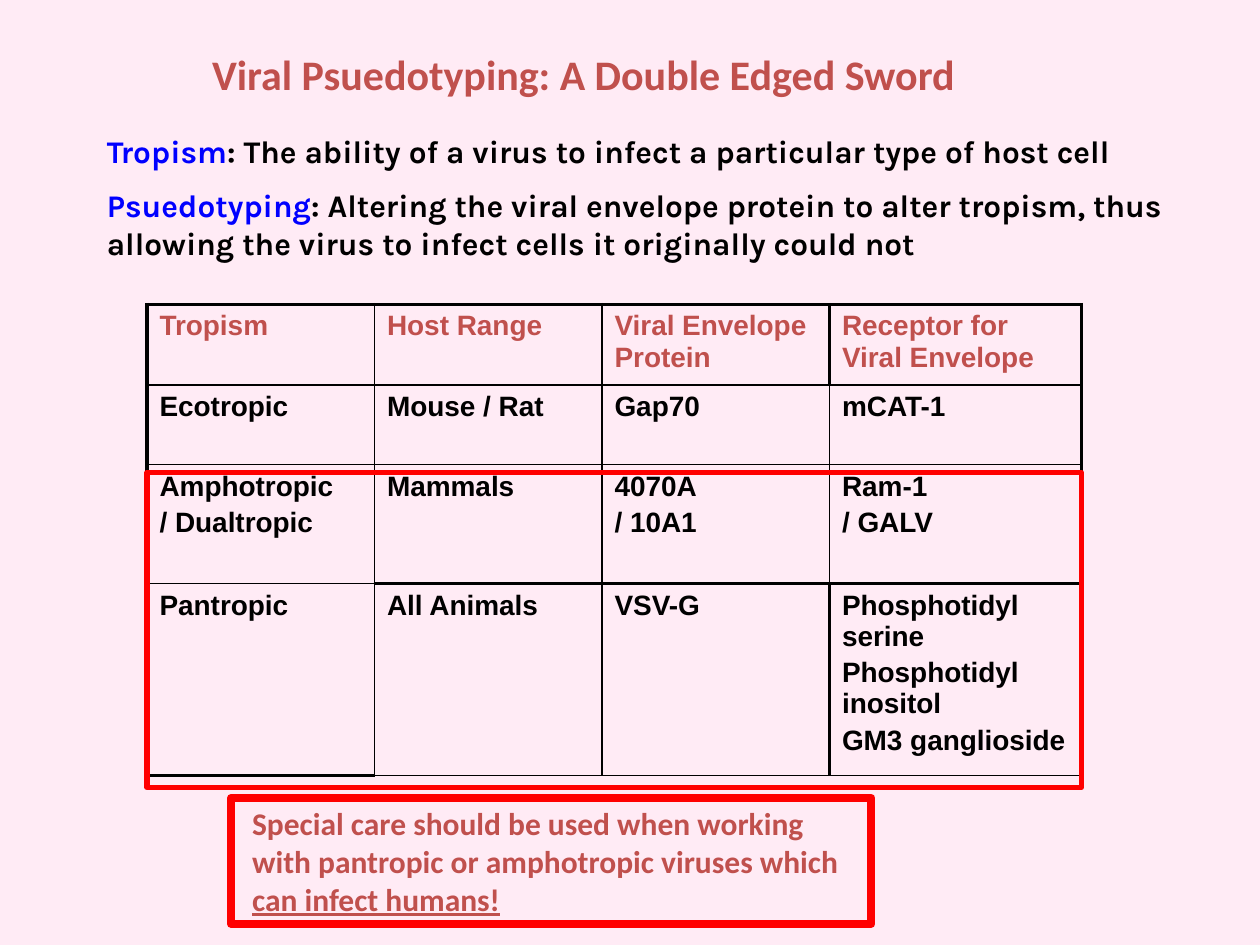
from lxml import etree
from pptx import Presentation
from pptx.dml.color import RGBColor
from pptx.enum.shapes import MSO_SHAPE
from pptx.enum.text import MSO_ANCHOR, PP_ALIGN
from pptx.oxml.ns import qn
from pptx.util import Pt

PINK, BLACK, BLUE = "FFEBF5", "000000", "0000FF"
BRICK, RED = "C0504D", "FF0000"
THIN, THICK = 1, 2.25

DEFINITIONS = [
    ("Tropism", ": The ability of a virus to infect a particular type of host cell"),
    ("Psuedotyping", ": Altering the viral envelope protein to alter tropism, thus "
                     "allowing the virus to infect cells it originally could not"),
]
TROPISMS = [
    ["Tropism", "Host Range", "Viral Envelope Protein", "Receptor for Viral Envelope"],
    ["Ecotropic", "Mouse / Rat", "Gap70", "mCAT-1"],
    ["Amphotropic\n/ Dualtropic", "Mammals", "4070A\n/ 10A1", "Ram-1\n/ GALV"],
    ["Pantropic", "All Animals", "VSV-G",
     "Phosphotidyl serine\nPhosphotidyl inositol\nGM3 ganglioside"],
]
COLUMN_WIDTHS = [130, 130, 130, 144]
ROW_HEIGHTS = [46, 45.5, 68, 109.5]


def color(hex_value):
    return RGBColor.from_string(hex_value)


def format_run(run, font_name, size, hex_value):
    run.font.name = font_name
    run.font.size = Pt(size)
    run.font.bold = True
    run.font.color.rgb = color(hex_value)


def add_run(paragraph, text, font_name, size, hex_value):
    run = paragraph.add_run()
    run.text = text
    format_run(run, font_name, size, hex_value)
    return run


def add_text_box(slide, left, top, width, height):
    frame = slide.shapes.add_textbox(Pt(left), Pt(top), Pt(width), Pt(height)).text_frame
    frame.word_wrap = True
    return frame


def add_outline(slide, left, top, width, height, weight):
    outline = slide.shapes.add_shape(
        MSO_SHAPE.RECTANGLE, Pt(left), Pt(top), Pt(width), Pt(height))
    outline.shadow.inherit = False
    outline.fill.background()
    outline.line.color.rgb = color(RED)
    outline.line.width = Pt(weight)


def set_title(slide, text):
    title = slide.shapes.title
    title.left, title.top, title.width, title.height = Pt(114), Pt(24), Pt(516), Pt(36)
    frame = title.text_frame
    frame.text = text
    frame.vertical_anchor = MSO_ANCHOR.TOP
    frame.paragraphs[0].alignment = PP_ALIGN.LEFT
    format_run(frame.paragraphs[0].runs[0], "Calibri", 24, BRICK)


def add_definitions(slide):
    frame = add_text_box(slide, 54, 72, 642, 83)
    for index, (term, meaning) in enumerate(DEFINITIONS):
        paragraph = frame.add_paragraph() if index else frame.paragraphs[0]
        if index:
            paragraph.space_before = Pt(9)
        add_run(paragraph, term, "Karla", 18, BLUE)
        add_run(paragraph, meaning, "Karla", 18, BLACK)


def vertical_weight(edge, row):
    """Weight of the rule left of column number `edge`."""
    outer = edge in (0, 4)
    receptor_edge = edge == 3 and row in (0, 3)
    return THICK if outer or receptor_edge else THIN


def horizontal_weight(edge, column):
    """Weight of the rule above row number `edge`."""
    above_pantropic = edge == 3 and column > 0
    below_pantropic = edge == 4 and column == 0
    return THICK if edge == 0 or above_pantropic or below_pantropic else THIN


def set_borders(cell, row, column):
    properties = cell._tc.get_or_add_tcPr()
    weights = {
        "a:lnL": vertical_weight(column, row),
        "a:lnR": vertical_weight(column + 1, row),
        "a:lnT": horizontal_weight(row, column),
        "a:lnB": horizontal_weight(row + 1, column),
    }
    for tag, weight in weights.items():
        border = etree.SubElement(properties, qn(tag), w=str(int(Pt(weight))))
        fill = etree.SubElement(border, qn("a:solidFill"))
        etree.SubElement(fill, qn("a:srgbClr"), val=BLACK)


def fill_cell(cell, text, hex_value):
    cell.fill.background()
    cell.text_frame.text = text
    for index, paragraph in enumerate(cell.text_frame.paragraphs):
        if index:
            paragraph.space_before = Pt(3.2)
        format_run(paragraph.runs[0], "Arial", 16, hex_value)


def add_tropism_table(slide):
    table = slide.shapes.add_table(
        len(ROW_HEIGHTS), len(COLUMN_WIDTHS), Pt(84), Pt(174),
        Pt(sum(COLUMN_WIDTHS)), Pt(sum(ROW_HEIGHTS))).table
    table.first_row = table.horz_banding = False
    for column, width in zip(table.columns, COLUMN_WIDTHS):
        column.width = Pt(width)
    for row, height in zip(table.rows, ROW_HEIGHTS):
        row.height = Pt(height)
    for r, entries in enumerate(TROPISMS):
        for c, entry in enumerate(entries):
            cell = table.cell(r, c)
            set_borders(cell, r, c)
            fill_cell(cell, entry, BLACK if r else BRICK)


def add_warning(slide):
    warning = add_text_box(slide, 137, 456, 355, 72).paragraphs[0]
    add_run(warning, "Special care should be used when working with pantropic or "
                     "amphotropic viruses which ", "Calibri", 18, BRICK)
    danger = add_run(warning, "can infect humans!", "Calibri", 18, BRICK)
    danger.font.underline = True
    add_outline(slide, 132, 456, 366, 72, 4.5)


def main():
    presentation = Presentation()
    presentation.slide_width, presentation.slide_height = Pt(720), Pt(540)
    slide = presentation.slides.add_slide(presentation.slide_layouts[5])
    slide.background.fill.solid()
    slide.background.fill.fore_color.rgb = color(PINK)

    # Title and definitions
    set_title(slide, "Viral Psuedotyping: A Double Edged Sword")
    add_definitions(slide)

    # Table, safety note and frame around the rows that concern humans
    add_tropism_table(slide)
    add_warning(slide)
    add_outline(slide, 84, 270, 534, 180, 3)

    presentation.save("out.pptx")


if __name__ == "__main__":
    main()
